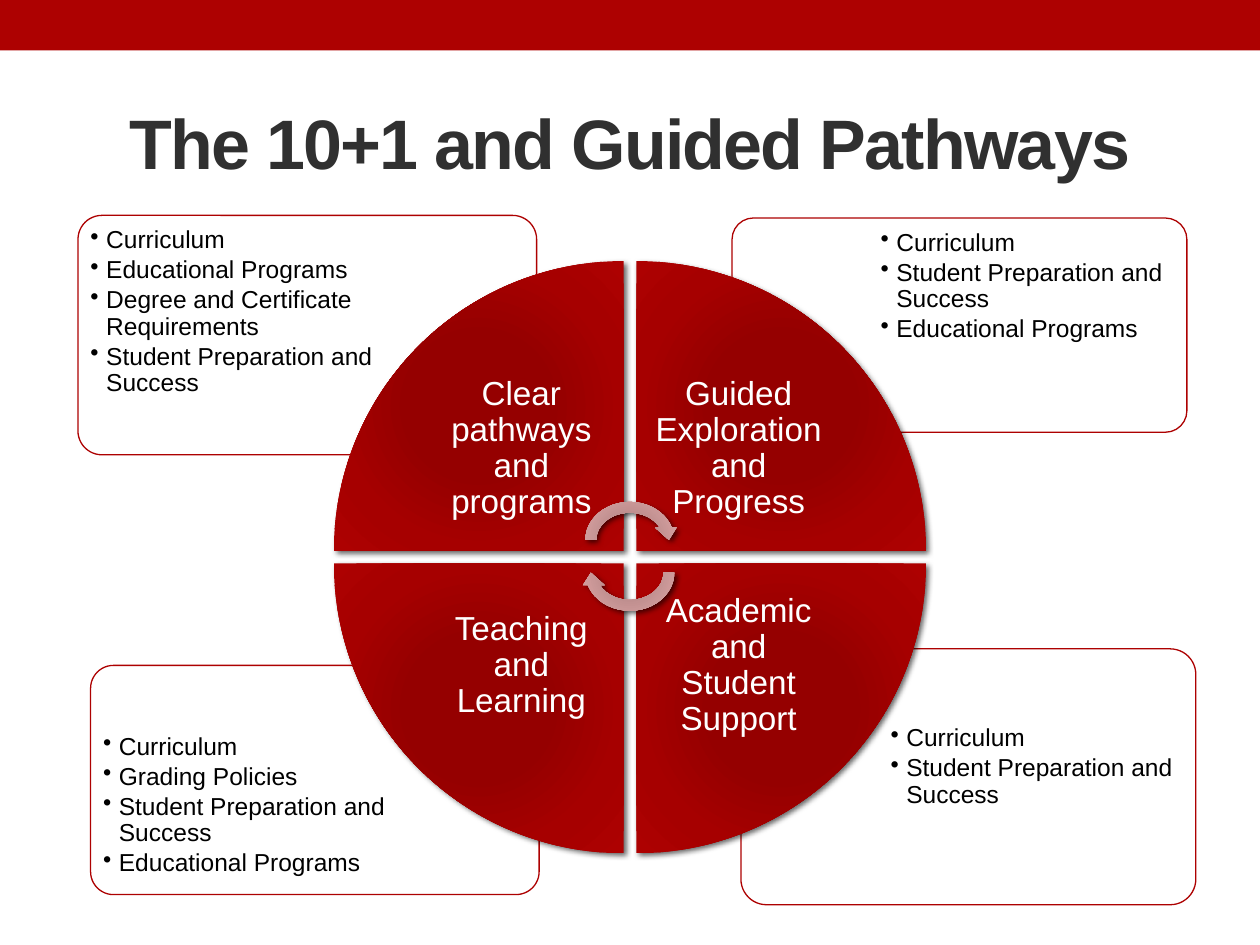
import lxml.etree
import pptx
import pptx.dml.color
import pptx.enum.shapes
import pptx.enum.text
import pptx.oxml
import pptx.oxml.ns
import pptx.util

Pt = pptx.util.Pt
RGBColor = pptx.dml.color.RGBColor
SHAPE = pptx.enum.shapes.MSO_SHAPE
ALIGN = pptx.enum.text.PP_ALIGN
ANCHOR = pptx.enum.text.MSO_ANCHOR
qn = pptx.oxml.ns.qn

RED = RGBColor(0xAD, 0x01, 0x01)
CHARCOAL = RGBColor(0x30, 0x30, 0x30)
WHITE = RGBColor(0xFF, 0xFF, 0xFF)
BLACK = RGBColor(0, 0, 0)
WEDGE_STOPS = [
    (0, RGBColor(0x95, 0, 0)), (34, RGBColor(0x95, 0, 0)),
    (70, RGBColor(0xA6, 0, 0)), (100, RED),
]
ARROW_STOPS = [
    (0, RGBColor(0xBD, 0x8A, 0x8A)), (34, RGBColor(0xBB, 0x8C, 0x8C)),
    (70, RGBColor(0xD1, 0x9C, 0x9C)), (100, RGBColor(0xD3, 0xAB, 0xAB)),
]

FONT = "Arial"
WEDGE_LEFT, WEDGE_TOP = 190.8, 149.2
WEDGE_SIZE, WEDGE_STEP = 165.6, 172.8
LABEL_SIZE = 117

PREPARATION = "Student Preparation and Success"
PROGRAMS = "Educational Programs"
# Card box, list box, list items
CARDS = [
    ((423.4, 370.8, 259.9, 146.2), (504.7, 410.4, 175, 103),
     ["Curriculum", PREPARATION]),
    ((51.8, 380.2, 256.3, 131), (54.7, 415.4, 173.5, 92.2),
     ["Curriculum", "Grading Policies", PREPARATION, PROGRAMS]),
    ((418.3, 124.6, 259.9, 122.4), (499, 127.4, 176.4, 86.4),
     ["Curriculum", PREPARATION, PROGRAMS]),
    ((44.6, 123.1, 262.1, 136.8), (47.5, 126, 177.8, 96.5),
     ["Curriculum", PROGRAMS, "Degree and Certificate Requirements",
      PREPARATION]),
]
# Column, row, rotation, label
QUADRANTS = [
    (0, 0, 0, "Clear pathways and programs"),
    (1, 0, 90, "Guided Exploration and Progress"),
    (1, 1, 180, "Academic and Student Support"),
    (0, 1, 270, "Teaching and Learning"),
]


def add_plain_shape(slide, kind, box, color):
    part = slide.shapes.add_shape(kind, *map(Pt, box))
    part.shadow.inherit = False
    part.fill.solid()
    part.fill.fore_color.rgb = color
    part.line.fill.background()
    return part


def add_glossy_shape(slide, kind, box, rotation, stops):
    """Preset shape with a radial gradient and a soft shadow."""
    part = add_plain_shape(slide, kind, box, RED)
    part.rotation = rotation
    properties = part._element.spPr
    stop_xml = "".join(
        f'<a:gs pos="{position * 1000}"><a:srgbClr val="{color}"/></a:gs>'
        for position, color in stops)
    gradient = pptx.oxml.parse_xml(
        f'<a:gradFill {pptx.oxml.ns.nsdecls("a")} rotWithShape="1">'
        f'<a:gsLst>{stop_xml}</a:gsLst><a:path path="circle">'
        '<a:fillToRect l="100000" t="100000" r="100000" b="100000"/>'
        '</a:path></a:gradFill>')
    properties.replace(properties.find(qn("a:solidFill")), gradient)
    properties.find(qn("a:effectLst")).append(pptx.oxml.parse_xml(
        f'<a:outerShdw {pptx.oxml.ns.nsdecls("a")} blurRad="{Pt(3)}" '
        f'dist="{Pt(2)}" dir="2700000" rotWithShape="0">'
        '<a:srgbClr val="000000"><a:alpha val="60000"/></a:srgbClr>'
        '</a:outerShdw>'))


def add_text(slide, box, lines, inset, size, color, space_after):
    frame = slide.shapes.add_textbox(*map(Pt, box)).text_frame
    frame.word_wrap = True
    frame.margin_left = frame.margin_right = Pt(inset)
    frame.margin_top = frame.margin_bottom = Pt(inset)
    frame.text = "\n".join(lines)
    for paragraph in frame.paragraphs:
        paragraph.line_spacing = 0.9
        paragraph.space_after = Pt(space_after)
        paragraph.font.name = FONT
        paragraph.font.size = Pt(size)
        paragraph.font.color.rgb = color
    return frame


def add_bullet(paragraph):
    paragraph.level = 1
    properties = paragraph._p.get_or_add_pPr()
    properties.set("marL", str(Pt(9)))
    properties.set("indent", str(Pt(-9)))
    bullet = lxml.etree.Element(qn("a:buChar"), char="•")
    properties.find(qn("a:defRPr")).addprevious(bullet)


def add_card(slide, card_box, list_box, items):
    card = add_plain_shape(slide, SHAPE.ROUNDED_RECTANGLE, card_box, WHITE)
    card.adjustments[0] = 0.1
    card.line.color.rgb = RED
    card.line.width = Pt(0.75)
    white = card._element.spPr.find(qn("a:solidFill"))[0]
    lxml.etree.SubElement(white, qn("a:alpha"), val="90000")
    frame = add_text(slide, list_box, items, 4.2, 14, BLACK, 2)
    for paragraph in frame.paragraphs:
        add_bullet(paragraph)


def add_quadrant(slide, column, row, rotation, label):
    left = WEDGE_LEFT + column * WEDGE_STEP
    top = WEDGE_TOP + row * WEDGE_STEP
    add_glossy_shape(slide, SHAPE.PIE_WEDGE,
                     (left, top, WEDGE_SIZE, WEDGE_SIZE), rotation,
                     WEDGE_STOPS)
    # The label square sits in the wedge's inner corner
    offset = WEDGE_SIZE - LABEL_SIZE
    label_box = (left + offset * (1 - column), top + offset * (1 - row),
                 LABEL_SIZE, LABEL_SIZE)
    frame = add_text(slide, label_box, [label], 10.8, 19, WHITE, 0)
    frame.vertical_anchor = ANCHOR.MIDDLE
    frame.paragraphs[0].alignment = ALIGN.CENTER


def set_title(slide, text):
    title = slide.shapes.title
    title.left, title.top = Pt(36), Pt(41.8)
    title.width, title.height = Pt(648), Pt(77.8)
    title.text_frame.text = text
    title.text_frame.vertical_anchor = ANCHOR.MIDDLE
    heading = title.text_frame.paragraphs[0]
    heading.alignment = ALIGN.CENTER
    heading.font.name = FONT
    heading.font.size = Pt(40)
    heading.font.bold = True
    heading.font.color.rgb = CHARCOAL
    heading.runs[0]._r.get_or_add_rPr().set("spc", "-100")


def main():
    deck = pptx.Presentation()
    deck.slide_width, deck.slide_height = Pt(720), Pt(540)
    slide = deck.slides.add_slide(deck.slide_layouts[5])

    # Top band and title
    add_plain_shape(slide, SHAPE.RECTANGLE, (0, 0, 720, 28.8), RED)
    set_title(slide, "The 10+1 and Guided Pathways")

    # Corner cards behind the wheel
    for card in CARDS:
        add_card(slide, *card)

    # Wheel of four wedges
    for quadrant in QUADRANTS:
        add_quadrant(slide, *quadrant)

    # Cycle arrows at the hub
    for top, rotation in ((283.7, 0), (302.4, 180)):
        add_glossy_shape(slide, SHAPE.CIRCULAR_ARROW,
                         (331.4, top, 57, 49.7), rotation, ARROW_STOPS)

    deck.save("out.pptx")


if __name__ == "__main__":
    main()
